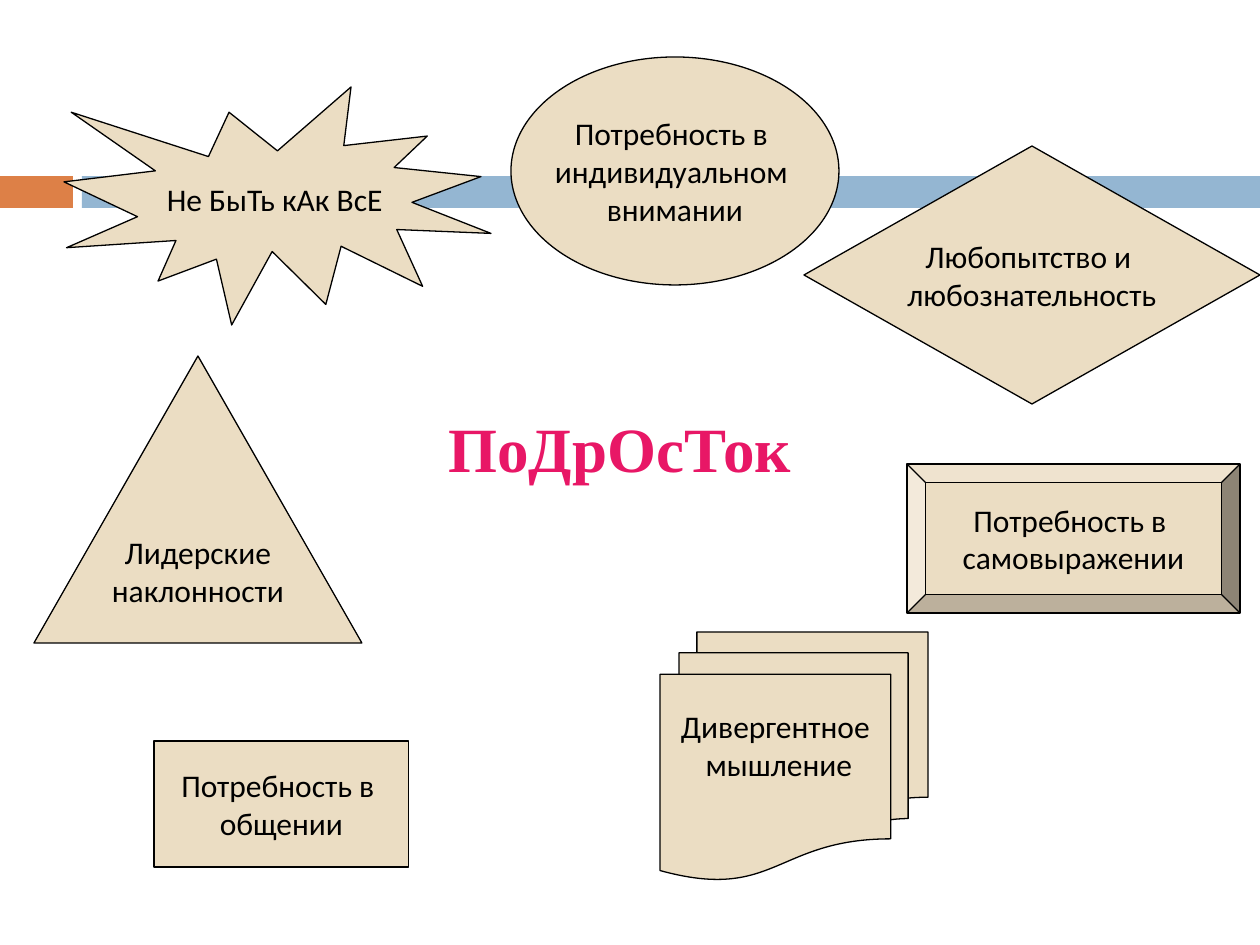
from dataclasses import dataclass

from pptx import Presentation
from pptx.dml.color import RGBColor as RGB
from pptx.enum.shapes import MSO_SHAPE as Shape
from pptx.enum.text import MSO_ANCHOR as Anchor, MSO_AUTO_SIZE as AutoSize, PP_ALIGN as Align
from pptx.util import Emu, Pt

PX = 914400 / 126
WIDTH, HEIGHT = 1260, 945


@dataclass(frozen=True)
class Theme:
    orange: RGB = RGB(0xDD, 0x80, 0x47)
    blue: RGB = RGB(0x94, 0xB6, 0xD2)
    sand: RGB = RGB(0xEB, 0xDD, 0xC3)
    ink: RGB = RGB(0, 0, 0)
    pink: RGB = RGB(0xE8, 0x17, 0x66)
    body_font: str = "Calibri"
    title_font: str = "Times New Roman"
    body_size: int = 18
    title_size: int = 36
    line_width: float = 0.75


T = Theme()
BODY = dict(name=T.body_font, size=Pt(T.body_size), bold=False)
TITLE = dict(name=T.title_font, size=Pt(T.title_size), bold=True)

# Needs: shape, box, lines
NEEDS = [
    (Shape.FLOWCHART_MULTIDOCUMENT, (660, 632, 268, 248), []),
    (Shape.OVAL, (511, 57, 328, 228),
     ["Потребность в ", "индивидуальном ", "внимании"]),
    (Shape.ISOSCELES_TRIANGLE, (34, 356, 328, 287), ["Лидерские", "наклонности"]),
    (Shape.EXPLOSION1, (64, 87, 427, 238), ["Не БыТь кАк ВсЕ"]),
    (Shape.BEVEL, (907, 464, 333, 149), ["Потребность в ", "самовыражении"]),
    (Shape.FLOWCHART_DECISION, (804, 146, 456, 258),
     ["Любопытство и ", "любознательность"]),
    (Shape.RECTANGLE, (154, 741, 255, 126), ["Потребность в ", "общении"]),
]


def emu(box):
    return [Emu(round(v * PX)) for v in box]


def write(tf, lines, font, color, anchor):
    for name, value in dict(word_wrap=False, vertical_anchor=anchor).items():
        setattr(tf, name, value)
    for i, line in enumerate(lines):
        p = tf.paragraphs[0] if i == 0 else tf.add_paragraph()
        p.alignment = Align.CENTER
        r = p.add_run()
        r.text = line
        for name, value in font.items():
            setattr(r.font, name, value)
        r.font.color.rgb = color


def add_figure(slide, kind, box, fill):
    sp = slide.shapes.add_shape(kind, *emu(box))
    sp.shadow.inherit = False
    sp.fill.solid()
    sp.fill.fore_color.rgb = fill
    sp.line.fill.background()
    return sp


def add_band(slide, box):
    """Orange tab, a gap, then the blue strip to the right edge."""
    x, y, w, h = box
    tab, gap = 73, 9
    strip = tab + gap
    add_figure(slide, Shape.RECTANGLE, (x, y, tab, h), T.orange)
    add_figure(slide, Shape.RECTANGLE, (x + strip, y, w - strip, h), T.blue)


def add_title(slide, box, text):
    sp = slide.shapes.title
    sp.left, sp.top, sp.width, sp.height = emu(box)
    tf = sp.text_frame
    tf.auto_size = AutoSize.NONE
    tf.margin_top = Emu(round(7 * PX))
    write(tf, [text], TITLE, T.pink, Anchor.TOP)


def add_need(slide, kind, box, lines):
    """An outlined figure with its label in the middle."""
    sp = add_figure(slide, kind, box, T.sand)
    sp.line.color.rgb = T.ink
    sp.line.width = Pt(T.line_width)
    write(sp.text_frame, lines, BODY, T.ink, Anchor.MIDDLE)


def add_caption(slide, box, lines):
    tf = slide.shapes.add_textbox(*emu(box)).text_frame
    tf.auto_size = AutoSize.SHAPE_TO_FIT_TEXT
    write(tf, lines, BODY, T.ink, Anchor.TOP)


def main():
    prs = Presentation()
    prs.slide_width, prs.slide_height = emu((WIDTH, HEIGHT))
    slide = prs.slides.add_slide(prs.slide_layouts[5])

    # Background band and central word
    add_band(slide, (0, 176, WIDTH, 32))
    add_title(slide, (392, 403, 456, 129), "ПоДрОсТок")

    # Needs around the word
    for need in NEEDS:
        add_need(slide, *need)
    add_caption(slide, (660, 701, 238, 88), ["Дивергентное ", "мышление"])

    prs.save("out.pptx")


if __name__ == "__main__":
    main()
